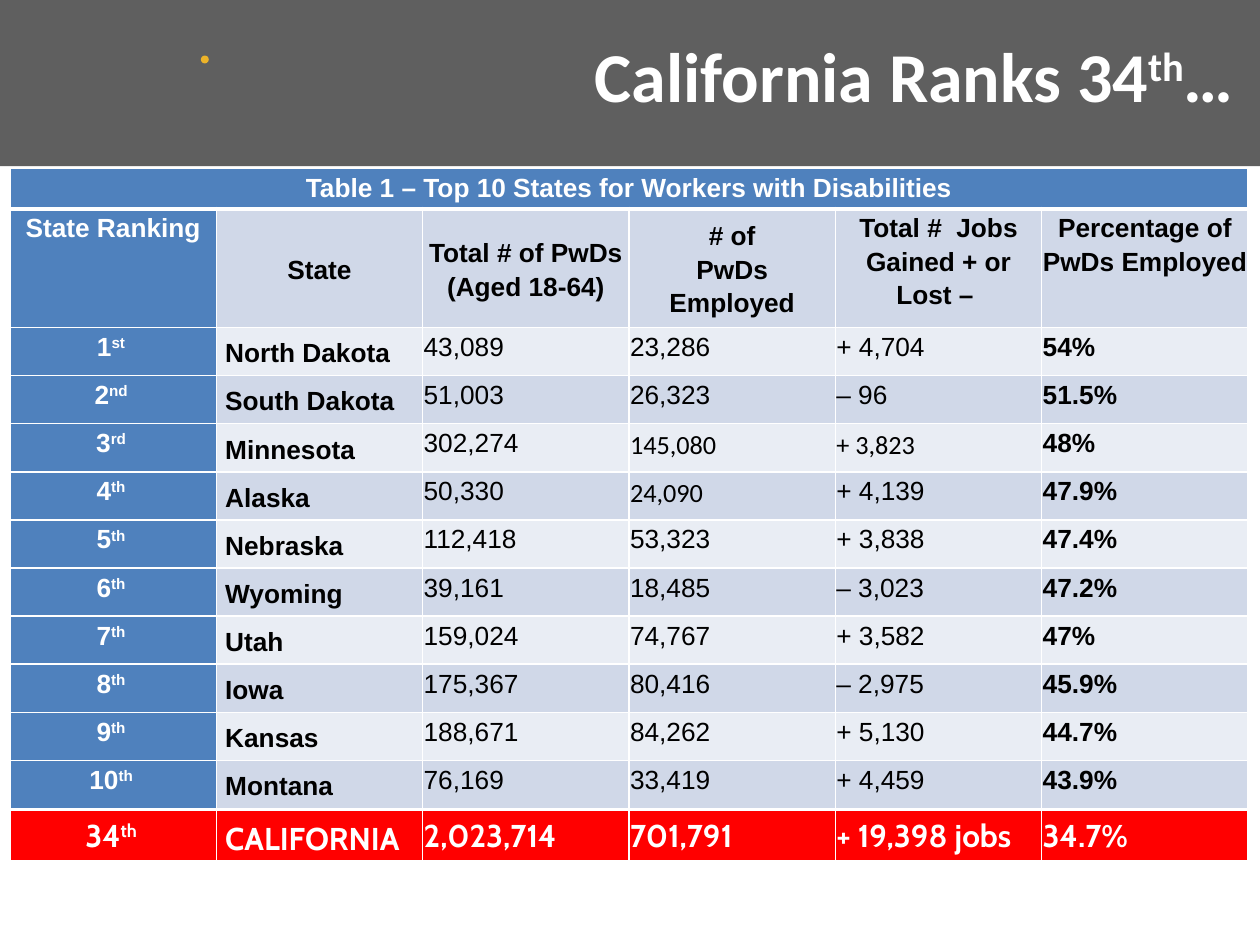
"""Build the slide that ranks states by employment of people with disabilities."""
from lxml.etree import SubElement
from pptx import Presentation
from pptx.dml.color import RGBColor
from pptx.enum.shapes import MSO_SHAPE as SHAPE
from pptx.enum.text import MSO_ANCHOR as ANCHOR, MSO_AUTO_SIZE as FIT, PP_ALIGN as ALIGN
from pptx.oxml.ns import qn
from pptx.util import Cm, Pt

COLORS = {"white": "FFFFFF", "black": "000000", "band": "5F5F5F", "dot": "ECB329",
          "blue": "4F81BD", "dark": "D0D8E8", "light": "E9EDF4", "red": "FF0000"}
CAPTION = "Table 1 – Top 10 States for Workers with Disabilities"
HEADINGS = ["State Ranking", "State", "Total # of PwDs (Aged 18-64)", "# of\nPwDs\nEmployed",
            "Total #  Jobs Gained + or Lost – ", "Percentage of PwDs Employed"]
STATES = [
    ["1^st ", "North Dakota", "43,089", "23,286", "+ 4,704", "54%"],
    ["2^nd ", "South Dakota", "51,003", "26,323", "– 96", "51.5%"],
    ["3^rd ", "Minnesota", "302,274", "145,080", "+ 3,823", "48%"],
    ["4^th ", "Alaska", "50,330", "24,090", "+ 4,139", "47.9%"],
    ["5^th ", "Nebraska", "112,418", "53,323", "+ 3,838", "47.4%"],
    ["6^th ", "Wyoming", "39,161", "18,485", "– 3,023", "47.2%"],
    ["7^th ", "Utah", "159,024", "74,767", "+ 3,582", "47%"],
    ["8^th ", "Iowa", "175,367", "80,416", "– 2,975", "45.9%"],
    ["9^th ", "Kansas", "188,671", "84,262", "+ 5,130", "44.7%"],
    ["10^th ", "Montana", "76,169", "33,419", "+ 4,459", "43.9%"],
]
CALIFORNIA = ["34^th ", "CALIFORNIA", "2,023,714", "701,791", "+ 19,398 jobs", "34.7%"]
CALIBRI_VALUES = {"145,080", "+ 3,823", "24,090"}


def rgb(name):
    """Return a named colour."""
    return RGBColor.from_string(COLORS[name])


def write(tf, text, size, font, color, bold=True, align=ALIGN.LEFT, spacing=1.0):
    """Fill a text frame, raising every second part between carets."""
    tf.text = text.replace("^", "")
    for p, line in zip(tf.paragraphs, text.split("\n")):
        p.text = ""
        p.alignment, p.line_spacing = align, spacing
        for i, part in enumerate(line.split("^")):
            r = p.add_run()
            r.text = part
            r.font.size, r.font.name, r.font.bold = Pt(size), font, bold
            r.font.color.rgb = rgb(color)
            if i % 2:
                r.font._element.set("baseline", "30000")


def add_header_shape(s, kind, left, top, width, height, color):
    """Add a plain filled shape without outline."""
    sp = s.shapes.add_shape(kind, Cm(left), Cm(top), Cm(width), Cm(height))
    sp.shadow.inherit = False
    sp.fill.solid()
    sp.fill.fore_color.rgb = rgb(color)
    sp.line.fill.background()
    return sp


def add_title(s, text):
    """Place the title in front of the header band."""
    sp = s.shapes.title
    s.shapes.element.append(sp.element)
    sp.left, sp.top, sp.width, sp.height = Cm(2.24), Cm(0.43), Cm(22.86), Cm(0.76)
    tf = sp.text_frame
    tf.word_wrap, tf.auto_size, tf.vertical_anchor = True, FIT.NONE, ANCHOR.TOP
    tf.margin_left = tf.margin_top = tf.margin_right = tf.margin_bottom = Cm(0.23)
    write(tf, text, 40, "Calibri", "white", align=ALIGN.RIGHT)


def set_borders(cell, top=1, bottom=1):
    """Draw white borders of the given widths in points."""
    tcPr = cell._tc.get_or_add_tcPr()
    for tag, width in (("lnL", 1), ("lnR", 1), ("lnT", top), ("lnB", bottom)):
        ln = SubElement(tcPr, qn(f"a:{tag}"), w=str(Pt(width)))
        fill = SubElement(ln, qn("a:solidFill"))
        SubElement(fill, qn("a:srgbClr"), val=COLORS["white"])


def style_cell(cell, fill, middle=False, padded=False, top=1, bottom=1):
    """Set borders, fill, anchor and margins of a cell."""
    set_borders(cell, top, bottom)
    cell.fill.solid()
    cell.fill.fore_color.rgb = rgb(fill)
    cell.vertical_anchor = ANCHOR.MIDDLE if middle else ANCHOR.TOP
    cell.margin_left = cell.margin_right = Cm(0.18 if padded else 0.02)
    cell.margin_top = cell.margin_bottom = Cm(0.08 if padded else 0.02)


def add_grid(s, top, heights):
    """Add an unstyled table of six equal columns."""
    frame = s.shapes.add_table(len(heights), 6, Cm(0.2), Cm(top), Cm(24.96), Cm(sum(heights)))
    table = frame.table
    table.first_row = table.horz_banding = False
    for row, height in zip(table.rows, heights):
        row.height = Cm(height)
    return table


def fill_state_row(cells, values, fill, rank_fill, color="black", size=15,
                   font="Arial", all_bold=False, bottom=1):
    """Write one ranked state into a row of cells."""
    for c, (cell, value) in enumerate(zip(cells, values)):
        style_cell(cell, fill if c else rank_fill, c == 1, c == 1, bottom=bottom)
        write(cell.text_frame, value, size,
              "Calibri" if value in CALIBRI_VALUES else font,
              color if c else "white", all_bold or c in (0, 1, 5),
              ALIGN.LEFT if c else ALIGN.CENTER, 1.15)


def add_top_ten(s):
    """Add the table of the ten best states."""
    table = add_grid(s, 3.4, [0.81, 2.39] + [0.97] * len(STATES))
    caption, *_, last = table.rows[0].cells
    for cell in table.rows[0].cells:
        style_cell(cell, "blue", bottom=3)
    caption.merge(last)
    write(caption.text_frame, CAPTION, 15, "Arial", "white", align=ALIGN.CENTER, spacing=1.15)
    for c, heading in enumerate(HEADINGS):
        cell = table.cell(1, c)
        style_cell(cell, "dark" if c else "blue", c in (1, 2, 3), c == 1, top=3)
        write(cell.text_frame, heading, 15, "Arial", "black" if c else "white",
              align=ALIGN.CENTER, spacing=1.15)
    for i, values in enumerate(STATES):
        fill_state_row(table.rows[i + 2].cells, values, "dark" if i % 2 else "light", "blue")


def add_california(s):
    """Add the highlighted row for California."""
    table = add_grid(s, 16.33, [1.02])
    fill_state_row(table.rows[0].cells, CALIFORNIA, "red", "red", "white", 18, "Cabin", True, 3)


def main():
    """Build and save the presentation."""
    prs = Presentation()
    prs.slide_width, prs.slide_height = Cm(25.4), Cm(19.05)
    s = prs.slides.add_slide(prs.slide_layouts[5])
    add_header_shape(s, SHAPE.RECTANGLE, 0, 0, 25.4, 3.35, "band")
    add_header_shape(s, SHAPE.OVAL, 4.05, 1.12, 0.16, 0.16, "dot")
    add_title(s, "California Ranks 34^th^…")
    add_top_ten(s)
    add_california(s)
    prs.save("out.pptx")


if __name__ == "__main__":
    main()
